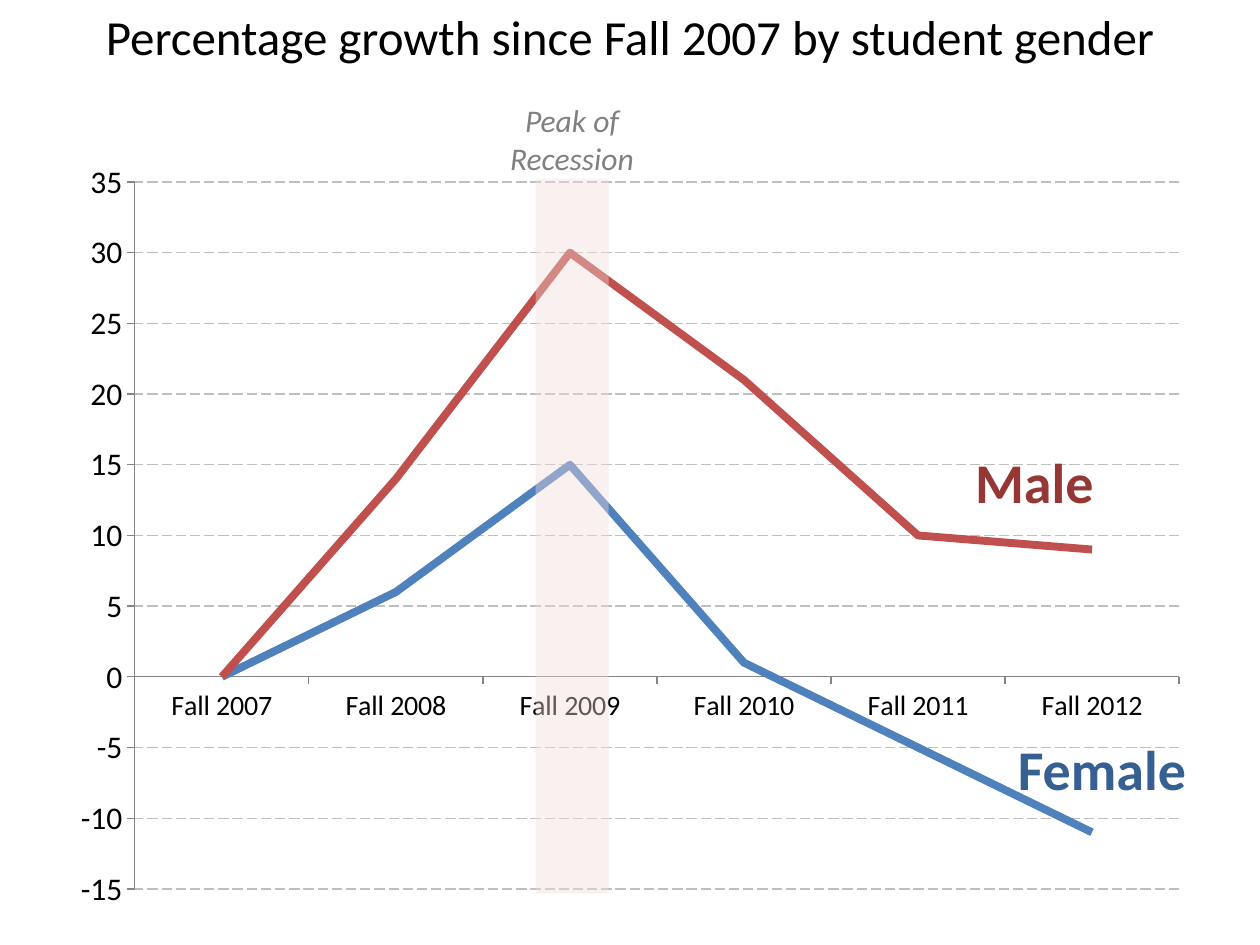
from pptx import Presentation
from pptx.chart.data import CategoryChartData as ChartData
from pptx.dml.color import RGBColor as Rgb
from pptx.enum.chart import XL_CHART_TYPE as Kind, XL_MARKER_STYLE as Mark, XL_TICK_MARK as Tick
from pptx.enum.dml import MSO_LINE as Dash
from pptx.enum.shapes import MSO_SHAPE as Form
from pptx.enum.text import MSO_AUTO_SIZE as Fit, PP_ALIGN as Align
from pptx.oxml.ns import qn
from pptx.util import Inches, Pt
from lxml.etree import SubElement as Sub

COLORS = {
    "text": "000000", "note": "808080", "axis": "868686", "grid": "BFBFBF",
    "female": "4F81BD", "male": "C0504D", "female_tag": "376092",
    "male_tag": "953735", "band": "F2DCDB",
}
TERMS = [f"Fall {year}" for year in range(2007, 2013)]
GROWTH = {
    "female": ("Series 1", [0, 6, 15, 1, -5, -11]),
    "male": ("Series 2", [0, 14, 30, 21, 10, 9]),
}


class Painter:
    """Holds the style and the current slide, and adds elements to it."""

    def __init__(self, slide, font="Calibri"):
        self.slide, self.font = slide, font

    def color(self, name):
        return Rgb.from_string(COLORS[name])

    def style(self, font, size, color="text", bold=False, italic=False):
        font.name, font.size = self.font, Pt(size)
        font.bold, font.italic = bold, italic
        font.color.rgb = self.color(color)

    def text(self, words, box, size, color="text", align=Align.LEFT, **look):
        frame = self.slide.shapes.add_textbox(*map(Inches, box)).text_frame
        frame.text = words
        frame.word_wrap = True
        frame.auto_size = Fit.SHAPE_TO_FIT_TEXT
        line = frame.paragraphs[0]
        line.alignment = align
        self.style(line.runs[0].font, size, color, **look)

    def band(self, box, color, alpha):
        shape = self.slide.shapes.add_shape(Form.RECTANGLE, *map(Inches, box))
        shape.shadow.inherit = False
        shape.fill.solid()
        shape.fill.fore_color.rgb = self.color(color)
        shape.line.fill.background()
        tint = shape.fill._xPr.find(qn("a:solidFill"))[0]
        Sub(tint, qn("a:alpha")).set("val", str(alpha * 1000))

    def axis(self, axis, size):
        self.style(axis.tick_labels.font, size)
        axis.major_tick_mark = Tick.OUTSIDE
        axis.minor_tick_mark = Tick.NONE
        axis.format.line.color.rgb = self.color("axis")
        axis.format.line.width = Pt(0.75)

    def chart(self, cats, series, box):
        data = ChartData()
        data.categories = cats
        for name, vals in series.values():
            data.add_series(name, vals)
        frame = self.slide.shapes.add_chart(Kind.LINE, *map(Inches, box), data)
        chart = frame.chart
        chart.has_legend = chart.has_title = False
        self.style(chart.font, 18)
        self.axis(chart.category_axis, 16)
        axis = chart.value_axis
        self.axis(axis, 18)
        axis.minimum_scale, axis.maximum_scale, axis.major_unit = -15, 35, 5
        axis.tick_labels.number_format = "0"
        axis.tick_labels.number_format_is_linked = False
        grid = axis.major_gridlines.format.line
        grid.color.rgb = self.color("grid")
        grid.width, grid.dash_style = Pt(0.75), Dash.LONG_DASH
        plot = chart.plots[0]
        plot.vary_by_categories = False
        for color, line in zip(series, plot.series):
            line.smooth = False
            line.marker.style = Mark.NONE
            line.format.line.color.rgb = self.color(color)
            line.format.line.width = Pt(4.5)


def main():
    deck = Presentation()
    deck.slide_width, deck.slide_height = Inches(10), Inches(7.5)
    pen = Painter(deck.slides.add_slide(deck.slide_layouts[6]))
    pen.text("Percentage growth since Fall 2007 by student gender",
             (0, 0, 10, 0.57), 28, align=Align.CENTER)
    pen.chart(TERMS, GROWTH, (0.46, 1.17, 9.08, 6.16))
    pen.text("Male", (7.64, 3.5, 1.77, 0.64), 32, "male_tag", bold=True)
    pen.text("Female", (7.98, 5.78, 1.77, 0.64), 32, "female_tag", bold=True)
    pen.band((4.25, 1.42, 0.58, 5.67), "band", 40)
    pen.text("Peak of Recession", (3.83, 0.75, 1.42, 0.71), 18, "note",
             Align.CENTER, italic=True)
    deck.save("out.pptx")


if __name__ == "__main__":
    main()
